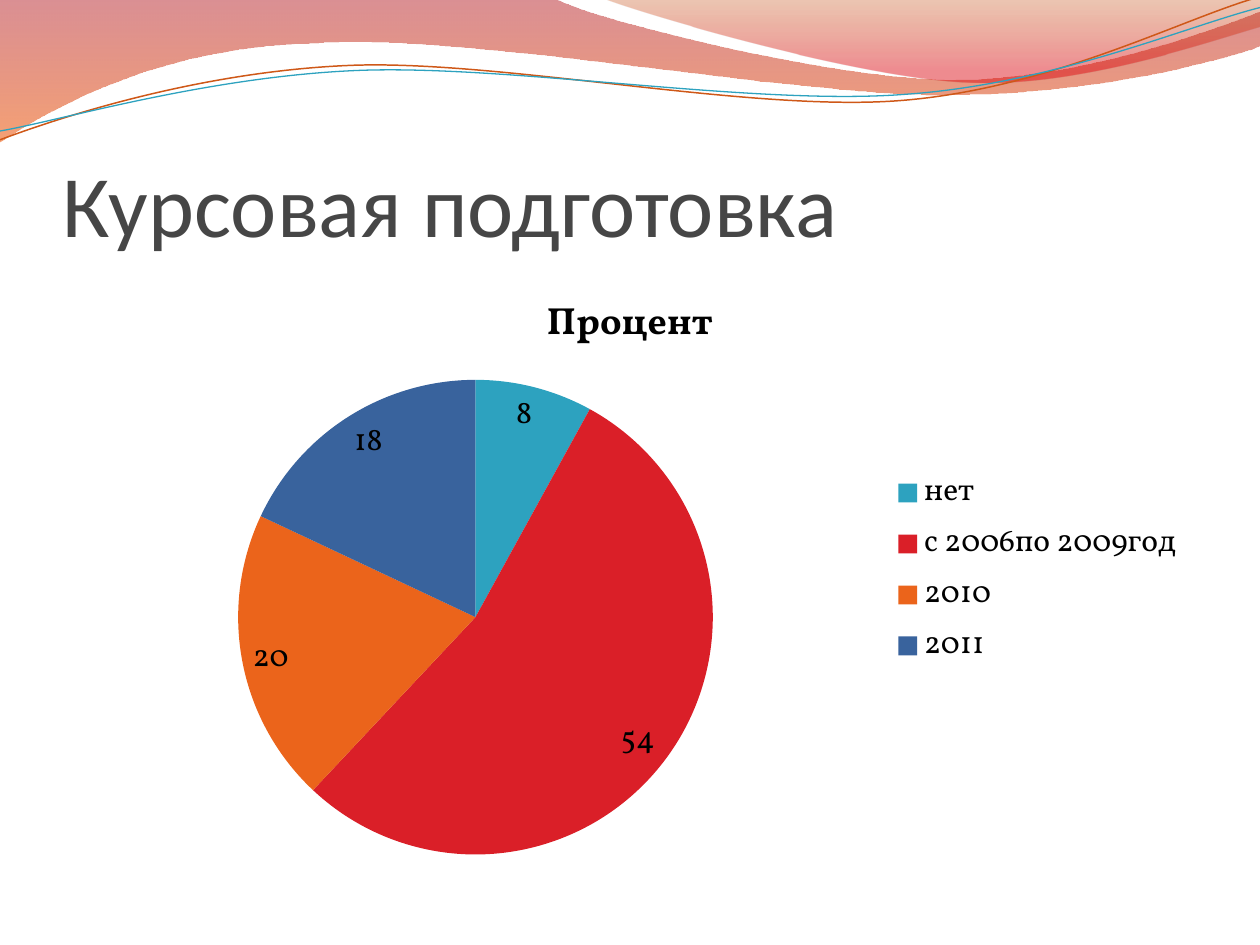
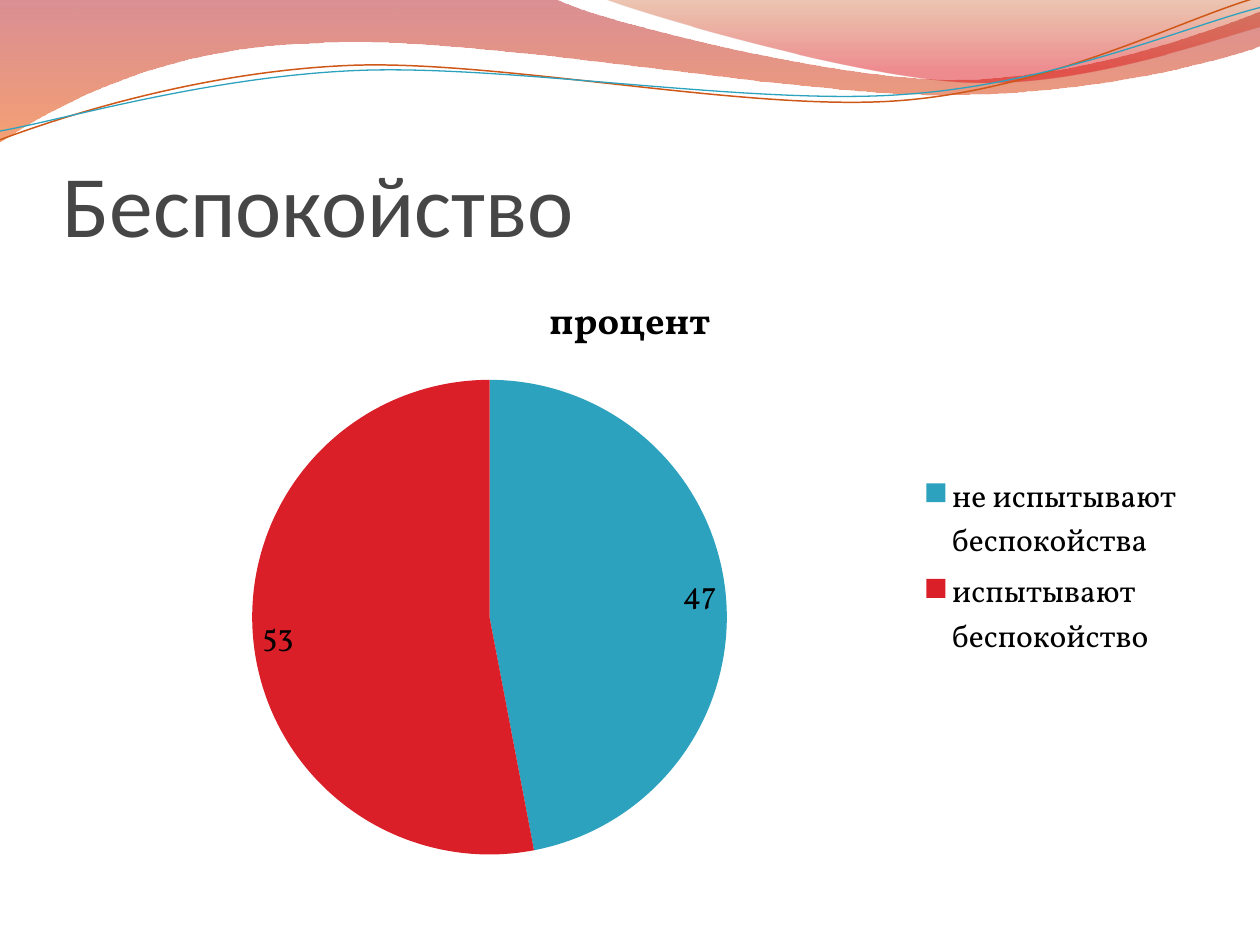
"""Build two survey slides, each with a wave header, a title and a pie chart."""
from dataclasses import dataclass
from typing import Any

from lxml import etree
from pptx import Presentation
from pptx.chart.data import CategoryChartData
from pptx.dml.color import RGBColor
from pptx.enum.chart import XL_CHART_TYPE, XL_LABEL_POSITION, XL_LEGEND_POSITION
from pptx.enum.text import MSO_ANCHOR
from pptx.oxml.ns import qn
from pptx.util import Inches, Pt

PIE = XL_CHART_TYPE.PIE
LEGEND_RIGHT = XL_LEGEND_POSITION.RIGHT
LABEL_BEST_FIT = XL_LABEL_POSITION.BEST_FIT
ANCHOR_BOTTOM = MSO_ANCHOR.BOTTOM

SLIDE_WIDTH, SLIDE_HEIGHT = Inches(10), Inches(7.5)
COLUMNS = 10
CELL = SLIDE_WIDTH / COLUMNS

Point = tuple[float, float]
Segment = tuple[Point, ...]


@dataclass(frozen=True)
class Theme:
    """Colours, fonts and type sizes of the deck."""

    title_font: str = "Calibri"
    chart_font: str = "Vollkorn"
    title_size: float = 50
    chart_title_size: float = 21.6
    chart_size: float = 18
    title_colour: str = "464646"
    chart_colour: str = "000000"
    slices: tuple[str, ...] = ("2DA2BF", "DA1F28", "EB641B", "39639D")


@dataclass(frozen=True)
class Area:
    """A rectangle in grid columns and rows."""

    column: float
    row: float
    columns: float
    rows: float

    def lengths(self) -> tuple[int, ...]:
        """Return left, top, width and height."""
        return tuple(round(value * CELL) for value in (self.column, self.row, self.columns, self.rows))


@dataclass(frozen=True)
class Stop:
    """A gradient stop with its opacity in percent."""

    position: float
    colour: str
    opacity: int


@dataclass(frozen=True)
class Wave:
    """A path of lines (one point) and curves (three points) with a fill or a line."""

    start: Point
    segments: tuple[Segment, ...]
    stops: tuple[Stop, ...] = ()
    line_colour: str = ""
    line_width: float = 0


@dataclass(frozen=True)
class Survey:
    """The content of one slide."""

    title: str
    chart_title: str
    series: str
    answers: dict[str, int]


THEME = Theme()
TITLE_AREA = Area(0.5, 0.77, 9, 1.25)
CHART_AREA = Area(0.5, 2.12, 9, 4.8)

WAVES = (
    Wave(
        (0, 0),
        (
            ((4.4, -0.01),),
            ((4.76, 0.17), (6.64, 0.63), (7.58, 0.63)),
            ((8.53, 0.63), (9.58, 0.26), (10, 0.09)),
            ((10.01, 0.36),),
            ((9.83, 0.44), (8.7, 0.76), (7.46, 0.75)),
            ((6.22, 0.75), (3.82, 0.28), (2.57, 0.34)),
            ((1.29, 0.36), (0.46, 0.83), (-0.01, 1.13)),
            ((0, 0),),
        ),
        stops=(Stop(0, "AF0911", 45), Stop(1, "EE5300", 55)),
    ),
    Wave(
        (4.79, -0.01),
        (
            ((5.09, 0.11), (6.82, 0.62), (7.69, 0.65)),
            ((8.56, 0.69), (9.61, 0.32), (10, 0.21)),
            ((10, 0),),
            ((4.79, -0.01),),
        ),
        stops=(Stop(0, "C24400", 30), Stop(0.8, "DC000B", 45)),
    ),
    Wave(
        (0, 1.11),
        (
            ((0.48, 0.93), (1.58, 0.57), (2.77, 0.52)),
            ((3.95, 0.47), (5.93, 0.89), (7.13, 0.8)),
            ((8.33, 0.71), (9.38, 0.15), (9.98, -0.02)),
        ),
        line_colour="CF5818",
        line_width=0.85,
    ),
    Wave(
        (0, 1.04),
        (
            ((0.47, 0.96), (1.64, 0.61), (2.83, 0.56)),
            ((4.03, 0.51), (5.97, 0.84), (7.17, 0.75)),
            ((8.36, 0.67), (9.41, 0.21), (10, 0.06)),
        ),
        line_colour="2DA2BF",
        line_width=0.75,
    ),
)

SURVEYS = (
    Survey(
        "Курсовая подготовка",
        "Процент",
        "Series 1",
        {"нет": 8, "с 2006по 2009год": 54, "2010": 20, "2011": 18},
    ),
    Survey(
        "Беспокойство",
        "процент",
        "процент",
        {"не испытывают беспокойства": 47, "испытывают беспокойство": 53},
    ),
)


def apply_format(target: Any, values: dict[str, Any]) -> None:
    """Set each named attribute on the target."""
    for name, value in values.items():
        setattr(target, name, value)


def style_font(font: Any, name: str, size: float, colour: str, bold: bool = False) -> None:
    """Set the typeface, size, weight and colour of a font."""
    apply_format(font, {"name": name, "size": Pt(size), "bold": bold})
    font.color.rgb = RGBColor.from_string(colour)


def bend_segments(shape: Any, segments: tuple[Segment, ...]) -> None:
    """Turn the straight steps of each three-point segment into one cubic curve."""
    steps = iter(list(shape._element.spPr.iter(qn("a:lnTo"))))
    for segment in segments:
        first, *others = [next(steps) for _ in segment]
        if others:
            first.tag = qn("a:cubicBezTo")
            for step in others:
                first.append(step[0])
                step.getparent().remove(step)


def fill_gradient(shape: Any, stops: tuple[Stop, ...]) -> None:
    """Fill a shape from top to bottom with translucent stops."""
    shape.fill.gradient()
    shape.fill.gradient_angle = 270
    for target, stop in zip(shape.fill.gradient_stops, stops):
        target.color.rgb = RGBColor.from_string(stop.colour)
        target.position = stop.position
    for colour, stop in zip(shape._element.spPr.iter(qn("a:srgbClr")), stops):
        etree.SubElement(colour, qn("a:alpha"), val=str(stop.opacity * 1000))


def draw_wave(page: Any, wave: Wave) -> Any:
    """Draw one wave of the header and return its shape."""
    points = [wave.start, *(point for segment in wave.segments for point in segment)]
    scaled = [(x * CELL, y * CELL) for x, y in points]
    builder = page.shapes.build_freeform(*scaled[0])
    builder.add_line_segments(scaled[1:], close=bool(wave.stops))
    shape = builder.convert_to_shape()
    bend_segments(shape, wave.segments)
    shape.shadow.inherit = False
    if wave.stops:
        fill_gradient(shape, wave.stops)
        shape.line.fill.background()
    else:
        shape.fill.background()
        shape.line.color.rgb = RGBColor.from_string(wave.line_colour)
        shape.line.width = Pt(wave.line_width)
    return shape


def draw_header(layout: Any, page: Any) -> None:
    """Draw the waves and hand them to the layout that all pages share."""
    for placeholder in list(layout.placeholders):
        placeholder._element.getparent().remove(placeholder._element)
    for shape in [draw_wave(page, wave) for wave in WAVES]:
        layout.shapes._spTree.append(shape._element)


def draw_title(page: Any, text: str) -> None:
    """Write the slide title."""
    box = page.shapes.add_textbox(*TITLE_AREA.lengths())
    frame_format = {
        "word_wrap": True,
        "vertical_anchor": ANCHOR_BOTTOM,
        "margin_left": 0,
        "margin_top": Inches(0.05),
        "margin_right": 0,
        "margin_bottom": 0,
    }
    apply_format(box.text_frame, frame_format)
    span = box.text_frame.paragraphs[0].add_run()
    span.text = text
    style_font(span.font, THEME.title_font, THEME.title_size, THEME.title_colour)


def draw_pie(page: Any, survey: Survey) -> None:
    """Chart the answers of a survey as a pie."""
    data = CategoryChartData()
    data.categories = list(survey.answers)
    data.add_series(survey.series, list(survey.answers.values()))
    chart = page.shapes.add_chart(PIE, *CHART_AREA.lengths(), data).chart
    style_font(chart.font, THEME.chart_font, THEME.chart_size, THEME.chart_colour)

    span = chart.chart_title.text_frame.paragraphs[0].add_run()
    span.text = survey.chart_title
    style_font(span.font, THEME.chart_font, THEME.chart_title_size, THEME.chart_colour, bold=True)

    chart.has_legend = True
    apply_format(chart.legend, {"position": LEGEND_RIGHT, "include_in_layout": False})

    plot = chart.plots[0]
    apply_format(plot, {"vary_by_categories": True, "has_data_labels": True})
    apply_format(plot.data_labels, {"show_value": True, "show_percentage": False, "position": LABEL_BEST_FIT})
    for index, colour in zip(range(len(survey.answers)), THEME.slices):
        piece = plot.series[0].points[index].format
        piece.fill.solid()
        piece.fill.fore_color.rgb = RGBColor.from_string(colour)
        piece.line.fill.background()


def main() -> None:
    """Build and save the deck."""
    deck = Presentation()
    apply_format(deck, {"slide_width": SLIDE_WIDTH, "slide_height": SLIDE_HEIGHT})
    layout = deck.slide_layouts[6]
    pages = [deck.slides.add_slide(layout) for _ in SURVEYS]
    draw_header(layout, pages[0])
    for page, survey in zip(pages, SURVEYS):
        draw_title(page, survey.title)
        draw_pie(page, survey)
    deck.save("out.pptx")


if __name__ == "__main__":
    main()
